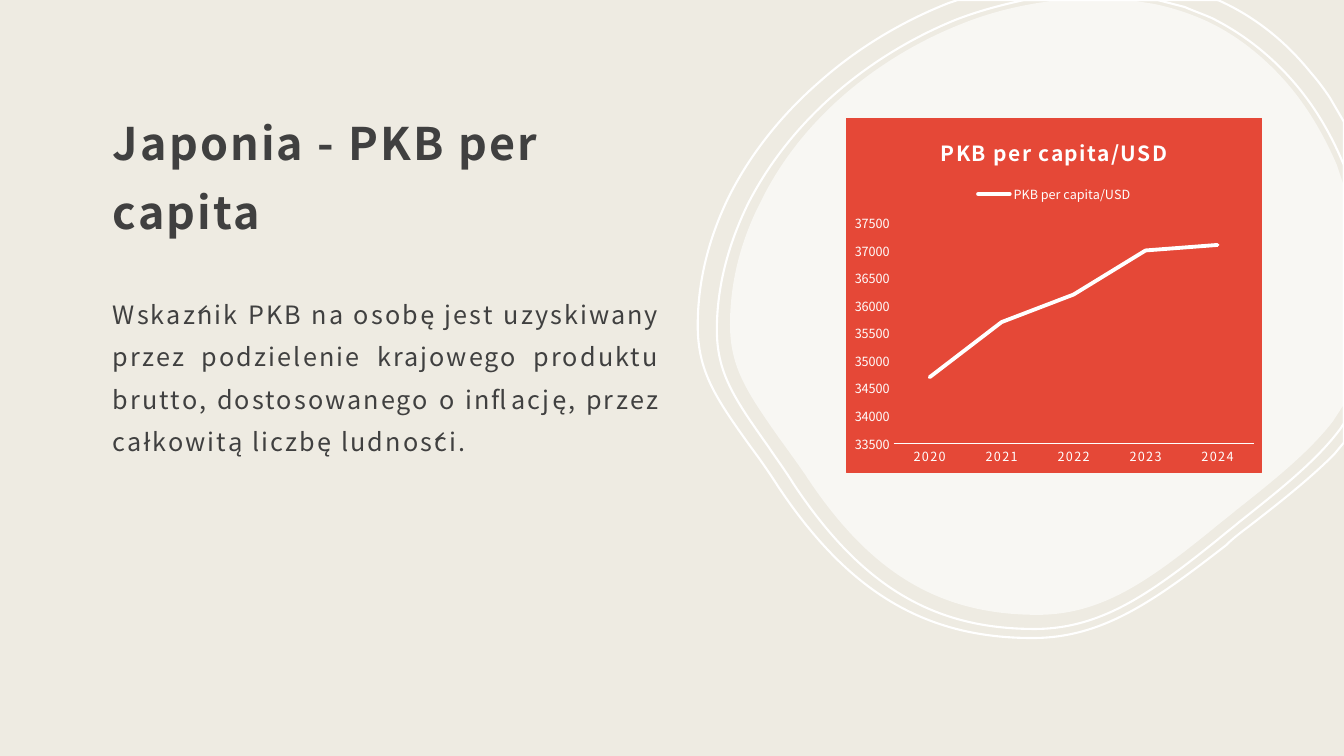
import dataclasses

import lxml.etree
import pptx
import pptx.chart.data
import pptx.dml.color
import pptx.enum.chart
import pptx.enum.text
import pptx.oxml
import pptx.oxml.ns
import pptx.util

Inches = pptx.util.Inches
Pt = pptx.util.Pt
qn = pptx.oxml.ns.qn


def rgb(value):
    return pptx.dml.color.RGBColor.from_string(value)


@dataclasses.dataclass(frozen=True)
class Theme:
    font: str = "Noto Sans CJK JP"
    background: str = "EEEBE2"
    text: str = "404040"
    white: str = "FFFFFF"
    red: str = "E54837"
    title_size: float = 32
    body_size: float = 18
    chart_title_size: float = 15
    label_size: float = 9
    tracking: int = 150


THEME = Theme()

# Outlines in inches: a start point, then lines (2 numbers) and cubic curves (6)
MIDDLE_RING = [
    (10.16, 0), (11.48, 0), (11.75, 0.07),
    (11.84, 0.11, 11.93, 0.14, 12.02, 0.18), (12.34, 0.34, 12.63, 0.57, 12.87, 0.86),
    (13.06, 1.09, 13.21, 1.35, 13.33, 1.64), (13.33, 1.66), (13.33, 4.2), (13.29, 4.26),
    (13.05, 4.58, 12.68, 4.87, 12.29, 5.18), (12.22, 5.24, 12.14, 5.3, 12.07, 5.36),
    (11.41, 5.89, 10.92, 6.24, 10.26, 6.24), (9.25, 6.24, 8.54, 5.81, 7.87, 4.8),
    (7.79, 4.67, 7.7, 4.55, 7.62, 4.43), (7.28, 3.95, 7.11, 3.7, 7.11, 3.27),
    (7.11, 2.85, 7.22, 2.43, 7.42, 2.02), (7.62, 1.63, 7.9, 1.27, 8.26, 0.95),
    (8.61, 0.64, 9.03, 0.38, 9.47, 0.2), (9.7, 0.11, 9.93, 0.05, 10.16, 0),
]
OUTER_RING = [
    (9.5, 0), (12.07, 0), (12.1, 0.01),
    (12.45, 0.17, 12.75, 0.41, 13, 0.72), (13.07, 0.8, 13.13, 0.88, 13.19, 0.97),
    (13.33, 1.21), (13.33, 4.39), (13.23, 4.51),
    (12.99, 4.75, 12.7, 4.98, 12.39, 5.22), (12.31, 5.28, 12.23, 5.34, 12.16, 5.41),
    (11.45, 5.96, 10.94, 6.33, 10.24, 6.33), (9.18, 6.33, 8.42, 5.88, 7.72, 4.83),
    (7.63, 4.69, 7.54, 4.56, 7.45, 4.44), (7.09, 3.94, 6.92, 3.68, 6.92, 3.23),
    (6.92, 2.79, 7.03, 2.35, 7.24, 1.93), (7.45, 1.52, 7.75, 1.14, 8.13, 0.81),
    (8.5, 0.48, 8.95, 0.21, 9.41, 0.03),
]
PALE_BLOB = [
    (10.48, 0), (11.2, 0), (11.45, 0.04),
    (11.64, 0.08, 11.82, 0.14, 11.99, 0.22), (12.3, 0.37, 12.58, 0.6, 12.81, 0.88),
    (12.99, 1.1, 13.14, 1.36, 13.26, 1.64), (13.33, 1.85), (13.33, 4.01), (13.22, 4.18),
    (12.98, 4.49, 12.63, 4.77, 12.25, 5.07), (12.18, 5.13, 12.11, 5.18, 12.04, 5.24),
    (11.4, 5.76, 10.93, 6.1, 10.29, 6.1), (9.31, 6.1, 8.62, 5.68, 7.98, 4.7),
    (7.89, 4.57, 7.81, 4.46, 7.73, 4.35), (7.4, 3.88, 7.24, 3.64, 7.24, 3.22),
    (7.24, 2.81, 7.34, 2.4, 7.54, 2.01), (7.73, 1.62, 8, 1.27, 8.35, 0.96),
    (8.69, 0.66, 9.1, 0.41, 9.53, 0.24), (9.8, 0.13, 10.08, 0.06, 10.36, 0.02),
]


def style_font(font, size, color, bold=False):
    font.name, font.size, font.bold = THEME.font, Pt(size), bold
    font.color.rgb = rgb(color)


# Text column
def fill_placeholder(holder, box, text, size, line_spacing, bold=False):
    holder.left, holder.top, holder.width, holder.height = map(Inches, box)
    frame = holder.text_frame
    frame.text = text
    frame.word_wrap = True
    frame.auto_size = pptx.enum.text.MSO_AUTO_SIZE.NONE
    frame.margin_left = frame.margin_right = frame.margin_top = Inches(0.12)
    frame.margin_bottom = Inches(0.1)
    para = frame.paragraphs[0]
    para.line_spacing = line_spacing
    style_font(para.font, size, THEME.text, bold)
    para.runs[0].font._element.set("spc", str(THEME.tracking))
    return para


def add_text_column(page, box):
    left, top, width, height = box
    title = page.shapes.title
    para = fill_placeholder(title, (left, top, width, 1.99), "Japonia - PKB per capita",
                            THEME.title_size, 1.3, bold=True)
    para.alignment = pptx.enum.text.PP_ALIGN.LEFT
    title.text_frame.vertical_anchor = pptx.enum.text.MSO_ANCHOR.BOTTOM

    para = fill_placeholder(
        page.placeholders[1], (left, top + 2.25, width - 0.12, height - 2.25),
        "Wskaźnik PKB na osobę jest uzyskiwany przez podzielenie krajowego produktu "
        "brutto, dostosowanego o inflację, przez całkowitą liczbę ludności.",
        THEME.body_size, 1.4)
    para.alignment = pptx.enum.text.PP_ALIGN.JUSTIFY
    para.space_before = Pt(9.3)
    properties = para._p.get_or_add_pPr()
    properties.set("marL", "0")
    properties.set("indent", "0")
    properties.insert_element_before(
        pptx.oxml.parse_xml(f"<a:buNone {pptx.oxml.ns.nsdecls('a')}/>"),
        "a:tabLst", "a:defRPr", "a:extLst")


# Rounded backdrop
def add_outline(page, origin, outline):
    def place(x, y):
        return Inches(origin[0] + x), Inches(origin[1] + y)

    knots = [place(*segment[-2:]) for segment in outline]
    builder = page.shapes.build_freeform(*knots[0])
    builder.add_line_segments(knots[1:], close=True)
    shape = builder.convert_to_shape()
    shape.shadow.inherit = False

    # Bend the straight segments that have control points
    lines = list(shape._element.iter(qn("a:lnTo")))
    for line, segment in zip(lines, outline[1:]):
        if len(segment) == 6:
            line.tag = qn("a:cubicBezTo")
            for index in (0, 2):
                x, y = place(*segment[index:index + 2])
                control = lxml.etree.Element(qn("a:pt"))
                control.set("x", str(x - shape.left))
                control.set("y", str(y - shape.top))
                line.insert(index // 2, control)
    return shape


def add_backdrop(page, origin):
    for outline in (MIDDLE_RING, OUTER_RING):
        ring = add_outline(page, origin, outline)
        ring.fill.background()
        ring.line.color.rgb = rgb(THEME.white)
        ring.line.width = Pt(1.5)
    blob = add_outline(page, origin, PALE_BLOB)
    blob.fill.solid()
    blob.fill.fore_color.rgb = rgb(THEME.white)
    color = blob._element.spPr.find(qn("a:solidFill"))[0]
    lxml.etree.SubElement(color, qn("a:alpha")).set("val", "60000")
    blob.line.fill.background()


# Line chart on a red panel
def add_gdp_chart(page, box):
    data = pptx.chart.data.CategoryChartData()
    data.categories = ["2020", "2021", "2022", "2023", "2024"]
    data.add_series("PKB per capita/USD", (34700, 35700, 36200, 37000, 37100))
    chart = page.shapes.add_chart(
        pptx.enum.chart.XL_CHART_TYPE.LINE, *map(Inches, box), data).chart
    chart.font.name, chart.font.size = THEME.font, Pt(10)

    panel = pptx.oxml.parse_xml(
        f"<c:spPr {pptx.oxml.ns.nsdecls('c', 'a')}>"
        f'<a:solidFill><a:srgbClr val="{THEME.red}"/></a:solidFill>'
        f'<a:ln w="9525"><a:solidFill><a:srgbClr val="{THEME.red}"/></a:solidFill></a:ln>'
        "</c:spPr>")
    chart._chartSpace.find(qn("c:chart")).addnext(panel)

    chart.has_title = True
    chart.chart_title.text_frame.text = "PKB per capita/USD"
    span = chart.chart_title.text_frame.paragraphs[0].runs[0]
    style_font(span.font, THEME.chart_title_size, THEME.white, bold=True)
    span.font._element.set("spc", "100")

    chart.has_legend = True
    chart.legend.position = pptx.enum.chart.XL_LEGEND_POSITION.TOP
    chart.legend.include_in_layout = False
    style_font(chart.legend.font, THEME.label_size, THEME.white)

    for axis in (chart.category_axis, chart.value_axis):
        axis.has_major_gridlines = False
        axis.major_tick_mark = pptx.enum.chart.XL_TICK_MARK.NONE
        style_font(axis.tick_labels.font, THEME.label_size, THEME.white)
    chart.category_axis.tick_labels.font._element.set("spc", "100")
    chart.category_axis.format.line.color.rgb = rgb(THEME.white)
    chart.category_axis.format.line.width = Pt(1)
    values = chart.value_axis
    values.format.line.fill.background()
    values.minimum_scale, values.maximum_scale, values.major_unit = 33500, 37500, 500

    chart.plots[0].vary_by_categories = False
    series = chart.plots[0].series[0]
    series.smooth = False
    series.marker.style = pptx.enum.chart.XL_MARKER_STYLE.NONE
    series.format.line.color.rgb = rgb(THEME.white)
    series.format.line.width = Pt(2.75)
    stroke = series._element.spPr.find(qn("a:ln"))
    stroke.set("cap", "rnd")
    lxml.etree.SubElement(stroke, qn("a:round"))


def main():
    deck = pptx.Presentation()
    deck.slide_width, deck.slide_height = Inches(13.33), Inches(7.5)
    page = deck.slides.add_slide(deck.slide_layouts[1])
    page.background.fill.solid()
    page.background.fill.fore_color.rgb = rgb(THEME.background)
    add_text_column(page, (1, 0.48, 5.79, 6.04))
    add_backdrop(page, (0, 0))
    add_gdp_chart(page, (8.39, 1.17, 4.13, 3.52))
    deck.save("out.pptx")


if __name__ == "__main__":
    main()
